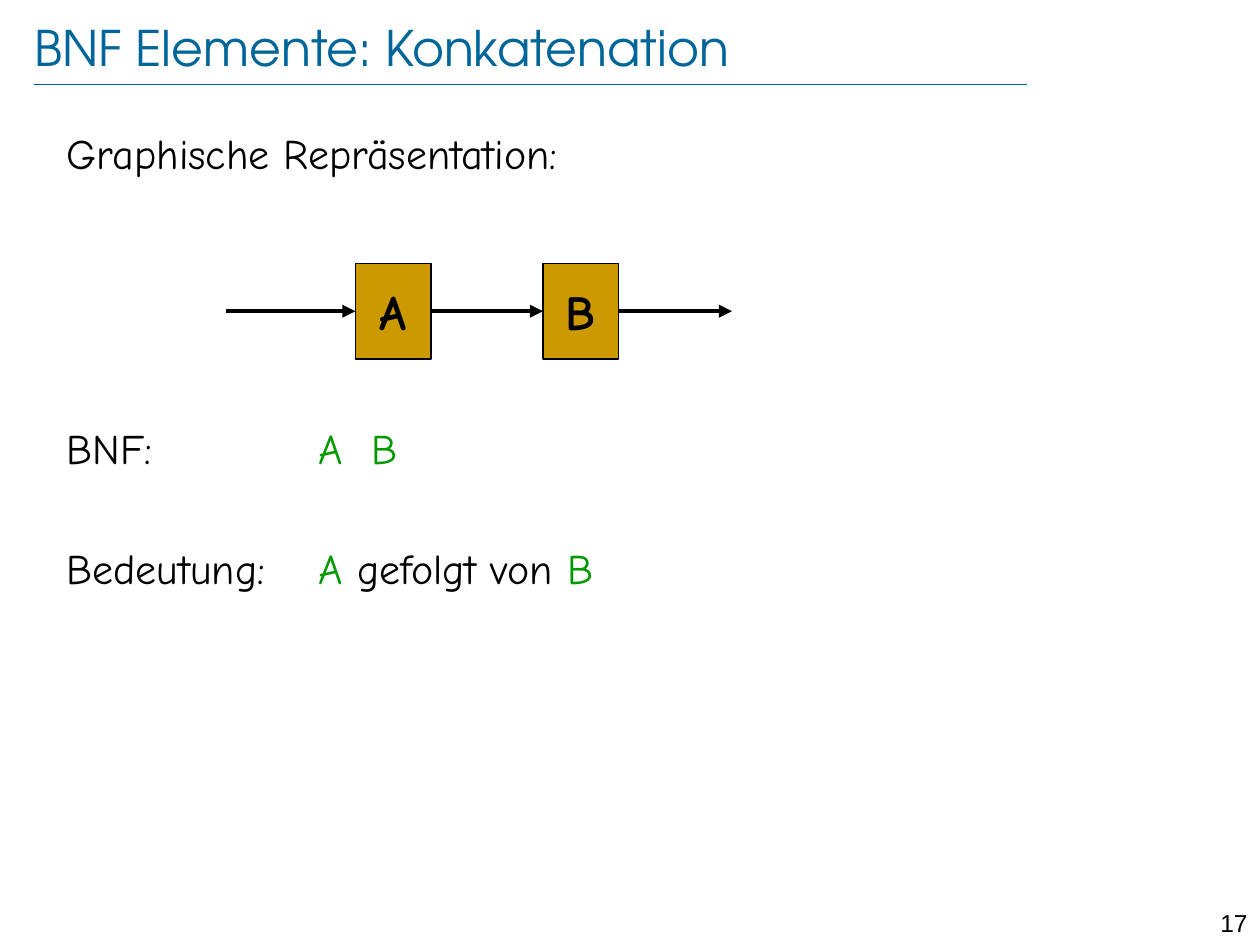
from pptx import Presentation
from pptx.dml.color import RGBColor
from pptx.enum.shapes import MSO_CONNECTOR as Conn, MSO_SHAPE as Kind
from pptx.enum.text import MSO_ANCHOR as Anchor, PP_ALIGN as Align
from pptx.oxml.ns import qn
from pptx.util import Pt
from lxml.etree import SubElement as Sub

HAND = "Comic Neue"
BLACK = "000000"
BLUE = "006699"
GREEN = "009900"
GOLD = "CC9900"


def color(code):
    return RGBColor.from_string(code)


def write(par, text, size=24, face=HAND, ink=BLACK, bold=False):
    run = par.add_run()
    run.text = text
    font = run.font
    font.size, font.name, font.bold = Pt(size), face, bold
    font.color.rgb = color(ink)


def frame(slide, box):
    body = slide.shapes.add_textbox(*map(Pt, box)).text_frame
    body.word_wrap = True
    return body


def strip(body):
    body.margin_left = body.margin_right = 0
    body.margin_top = body.margin_bottom = 0
    body.vertical_anchor = Anchor.MIDDLE


def line(slide, start, end, ink=BLACK, width=2.5, arrow=True):
    link = slide.shapes.add_connector(Conn.STRAIGHT, *map(Pt, (*start, *end)))
    link.line.color.rgb = color(ink)
    link.line.width = Pt(width)
    if arrow:
        Sub(link.line._get_or_add_ln(), qn("a:tailEnd"), type="triangle")
    Sub(link._element.spPr, qn("a:effectLst"))
    return link


def header(slide, box):
    left, top, width, height = box
    line(slide, (left, 48.2), (587, 48.2), BLUE, 0.25, False)
    body = frame(slide, box)
    strip(body)
    write(body.paragraphs[0], "BNF Elemente: Konkatenation", 28, "TeX Gyre Adventor", BLUE)


def content(slide, box):
    rows = [
        (0, [("Graphische Repräsentation:", BLACK)]),
        (140, [("BNF:\t", BLACK), ("A\tB", GREEN)]),
        (39.6, [("Bedeutung:\t", BLACK), ("A ", GREEN), ("gefolgt von ", BLACK), ("B", GREEN)]),
    ]
    body = frame(slide, box)
    for i, (gap, parts) in enumerate(rows):
        par = body.add_paragraph() if i else body.paragraphs[0]
        par.space_before = Pt(gap)
        tabs = Sub(par._p.get_or_add_pPr(), qn("a:tabLst"))
        for stop in (144, 174.5):
            Sub(tabs, qn("a:tab"), pos=str(Pt(stop)), algn="l")
        for text, ink in parts:
            write(par, text, ink=ink)


def node(slide, box, name):
    rect = slide.shapes.add_shape(Kind.RECTANGLE, *map(Pt, box))
    rect.shadow.inherit = False
    rect.fill.solid()
    rect.fill.fore_color.rgb = color(GOLD)
    rect.line.color.rgb = color(BLACK)
    rect.line.width = Pt(0.75)
    body = rect.text_frame
    strip(body)
    body.word_wrap = False
    par = body.paragraphs[0]
    par.alignment = Align.CENTER
    write(par, name, 28, bold=True)
    return rect


def chain(slide, box):
    left, top, width, height = box
    wide, step, lead = 43.2, 107.2, 74.2
    mid = top + height / 2
    last, start = None, left
    for i, name in enumerate("AB"):
        x = left + lead + i * step
        rect = node(slide, (x, top, wide, height), name)
        link = line(slide, (start, mid), (x, mid))
        if last:
            link.begin_connect(last, 3)
        link.end_connect(rect, 1)
        last, start = rect, x + wide
    line(slide, (start, mid), (left + width, mid)).begin_connect(last, 3)


def footer(slide, box):
    par = frame(slide, box).paragraphs[0]
    par.alignment = Align.RIGHT
    write(par, "17", 14, "Arial")


def main():
    deck = Presentation()
    deck.slide_width, deck.slide_height = Pt(720), Pt(540)
    slide = deck.slides.add_slide(deck.slide_layouts[6])
    header(slide, (19.5, 9.4, 625.7, 34.6))
    content(slide, (31, 69.1, 676.8, 444.2))
    chain(slide, (128.9, 150.5, 289.4, 54.7))
    footer(slide, (680.4, 515.5, 39.6, 17.3))
    deck.save("out.pptx")


if __name__ == "__main__":
    main()
